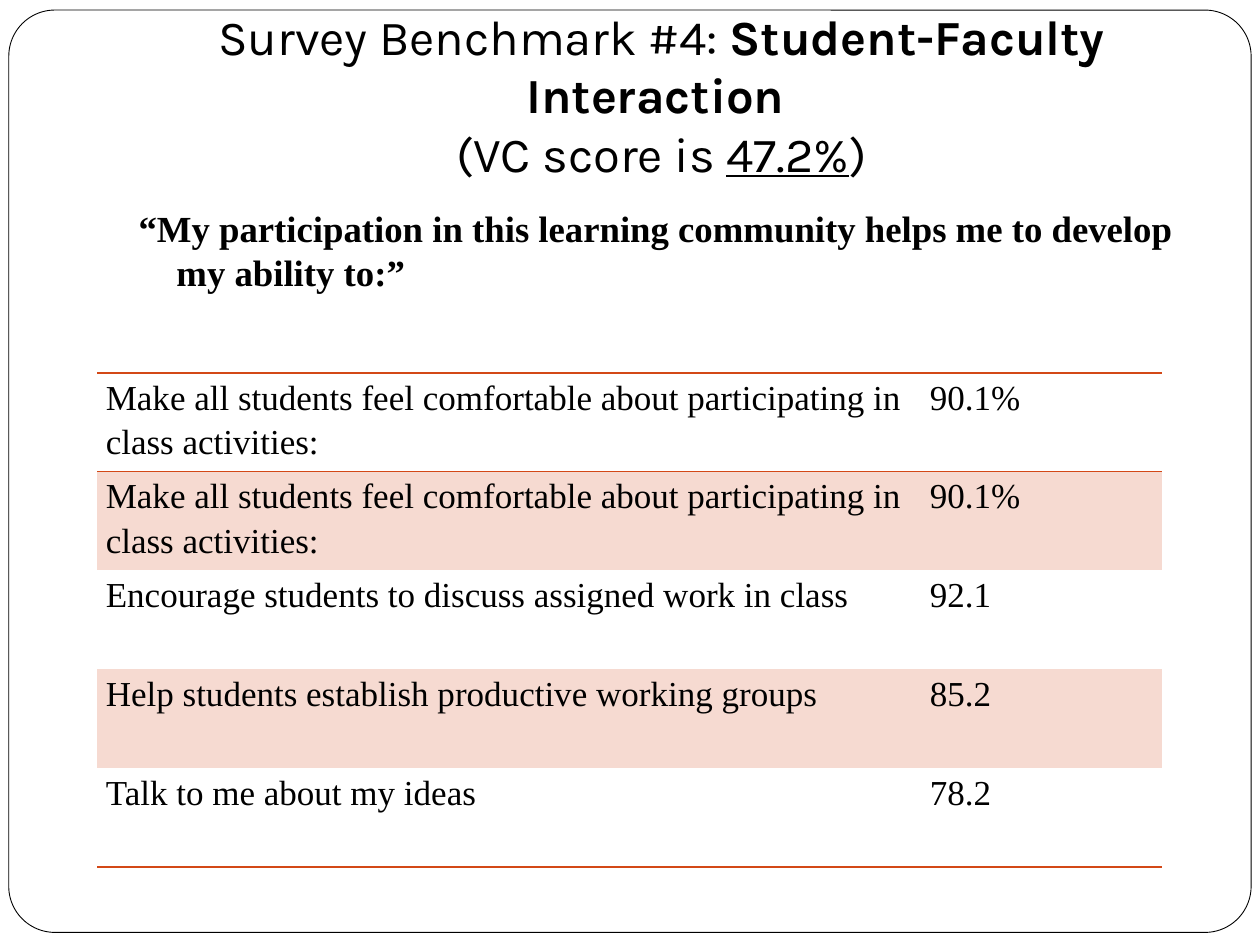
from lxml import etree
from pptx import Presentation
from pptx.dml.color import RGBColor
from pptx.enum.shapes import MSO_SHAPE
from pptx.enum.text import MSO_ANCHOR, MSO_AUTO_SIZE, PP_ALIGN
from pptx.oxml.ns import qn
from pptx.util import Inches, Pt

BLACK = RGBColor(0x00, 0x00, 0x00)
WHITE = RGBColor(0xFF, 0xFF, 0xFF)
ORANGE = RGBColor(0xD3, 0x48, 0x17)
PALE_ORANGE = RGBColor(0xF6, 0xDA, 0xD1)
NO_STYLE = "{2D5ABB26-0587-4C30-8999-92F81FD0307C}"


def style_font(font, name, size, bold=False):
    font.name = name
    font.size = Pt(size)
    font.bold = bold
    font.color.rgb = BLACK


def add_border(cell, side):
    line = etree.SubElement(cell._tc.get_or_add_tcPr(), qn(f"a:{side}"), w=str(Pt(1)))
    fill = etree.SubElement(line, qn("a:solidFill"))
    etree.SubElement(fill, qn("a:srgbClr"), val=str(ORANGE))


prs = Presentation()
prs.slide_width = Inches(10)
prs.slide_height = Inches(7.5)
slide = prs.slides.add_slide(prs.slide_layouts[1])
title, statement = slide.placeholders

frame = slide.shapes.add_shape(
    MSO_SHAPE.ROUNDED_RECTANGLE, Inches(0.07), Inches(0.08), Inches(9.86), Inches(7.32)
)
frame.adjustments[0] = 0.05
frame.shadow.inherit = False
frame.fill.solid()
frame.fill.fore_color.rgb = WHITE
frame.line.color.rgb = BLACK
frame.line.width = Pt(0.5)
slide.shapes._spTree.insert(2, frame._element)

title.left, title.top = Inches(1), Inches(0.3)
title.width, title.height = Inches(8.5), Inches(1.25)
title.text_frame.auto_size = MSO_AUTO_SIZE.NONE
title.text_frame.vertical_anchor = MSO_ANCHOR.BOTTOM
title.text_frame.margin_bottom = Inches(0.1)
heading = title.text_frame.paragraphs[0]
heading.alignment = PP_ALIGN.CENTER
for text, bold, underline in [
    ("Survey Benchmark #4: ", False, False),
    ("Student-Faculty Interaction ", True, False),
    ("(VC score is ", False, False),
    ("47.2%", False, True),
    (")", False, False),
]:
    run = heading.add_run()
    run.text = text
    style_font(run.font, "Karla", 28, bold)
    run.font.underline = underline
    if bold:
        heading.add_line_break()

statement.left, statement.top = Inches(1), Inches(1.58)
statement.width, statement.height = Inches(8.5), Inches(5)
statement.text_frame.auto_size = MSO_AUTO_SIZE.NONE
statement.text_frame.text = (
    "“My participation in this learning community helps me to develop my ability to:”"
)
quote = statement.text_frame.paragraphs[0]
quote.space_before = Pt(5.8)
style_font(quote.runs[0].font, "Times New Roman", 21, True)
quote_format = quote._p.get_or_add_pPr()
quote_format.set("marL", str(Inches(0.3)))
quote_format.set("indent", str(-Inches(0.3)))
etree.SubElement(quote_format, qn("a:buNone"))

results = [
    ("Make all students feel comfortable about participating in class activities:", "90.1%"),
    ("Make all students feel comfortable about participating in class activities:", "90.1%"),
    ("Encourage students to discuss assigned work in class", "92.1"),
    ("Help students establish productive working groups", "85.2"),
    ("Talk to me about my ideas", "78.2"),
]
last = len(results) - 1
table = slide.shapes.add_table(
    len(results), 2, Inches(0.77), Inches(2.96), Inches(8.45), Inches(3.92)
).table
table.first_row = False
table.horz_banding = False
table._tbl.tblPr.find(qn("a:tableStyleId")).text = NO_STYLE
table.columns[0].width = Inches(6.54)
table.columns[1].width = Inches(1.91)

for row, values in enumerate(results):
    for column, value in enumerate(values):
        cell = table.cell(row, column)
        cell.margin_left = cell.margin_right = Inches(0.07)
        cell.margin_top = cell.margin_bottom = 0
        cell.text_frame.text = value
        entry = cell.text_frame.paragraphs[0]
        entry.line_spacing = 1.15
        entry.space_after = Pt(10)
        style_font(entry.runs[0].font, "Times New Roman", 20)
        if row == 0:
            add_border(cell, "lnT")
        if row in (0, last):
            add_border(cell, "lnB")
        if row % 2:
            cell.fill.solid()
            cell.fill.fore_color.rgb = PALE_ORANGE
        else:
            cell.fill.background()

prs.save("out.pptx")
